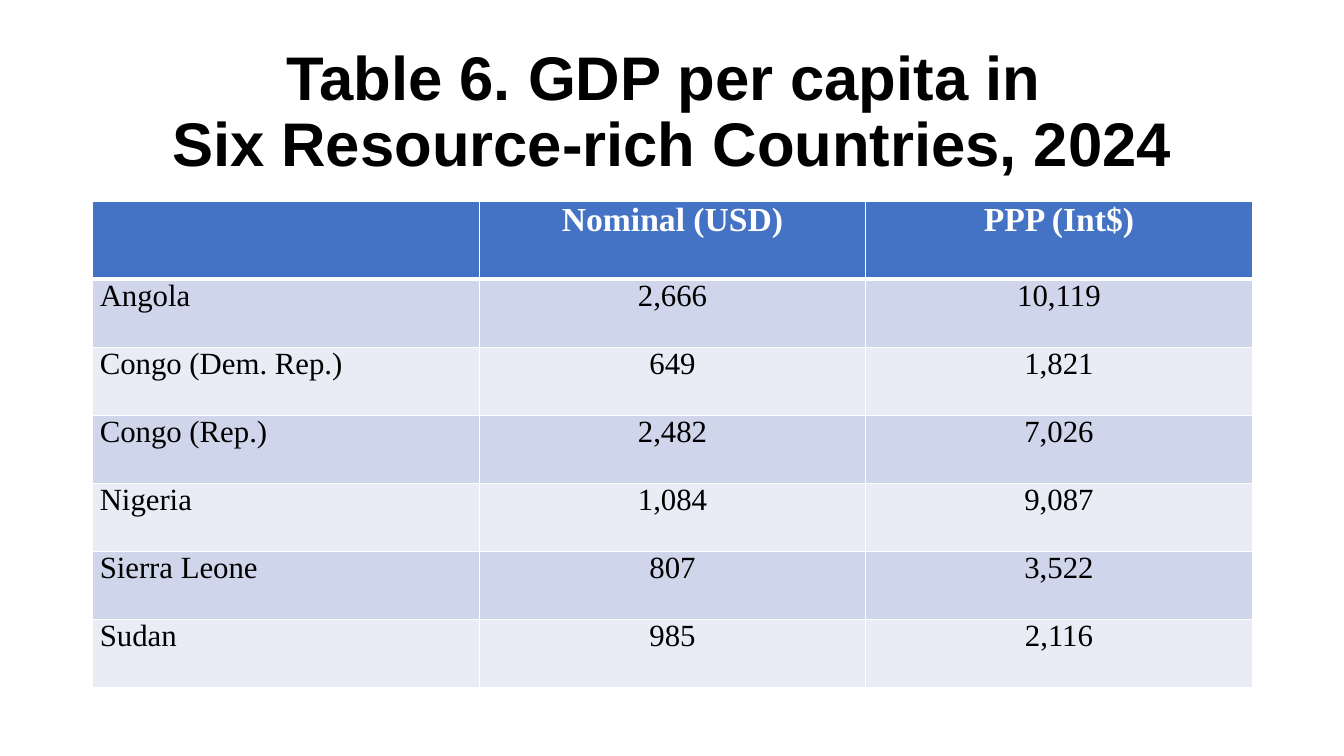
from dataclasses import dataclass

from lxml.etree import SubElement
from pptx import Presentation
from pptx.dml.color import RGBColor
from pptx.enum.text import MSO_ANCHOR, PP_ALIGN as Align
from pptx.oxml.ns import qn
from pptx.slide import Slide
from pptx.table import Table, _Cell as Cell
from pptx.text.text import _Paragraph as Paragraph
from pptx.util import Inches, Pt

BLACK = RGBColor(0x00, 0x00, 0x00)
WHITE = RGBColor(0xFF, 0xFF, 0xFF)
HEADER_BLUE = RGBColor(0x44, 0x72, 0xC4)
DARK_BAND = RGBColor(0xCF, 0xD5, 0xEA)
LIGHT_BAND = RGBColor(0xE9, 0xEB, 0xF5)

LEFT, WIDTH = 0.92, 11.5
TABLE_HEIGHT, HEADER_HEIGHT = 4.82, 0.77


@dataclass(frozen=True)
class TextStyle:
    font: str
    size: int
    color: RGBColor
    bold: bool


@dataclass(frozen=True)
class Country:
    name: str
    nominal: int
    ppp: int


TITLE_STYLE = TextStyle("Arial", 44, BLACK, True)
HEADER_STYLE = TextStyle("Times New Roman", 24, WHITE, True)
BODY_STYLE = TextStyle("Times New Roman", 22, BLACK, False)

TITLE_LINES = ["Table 6. GDP per capita in ", "Six Resource-rich Countries, 2024"]
HEADERS = ["", "Nominal (USD)", "PPP (Int$)"]
COUNTRIES = [
    Country("Angola", 2666, 10119),
    Country("Congo (Dem. Rep.)", 649, 1821),
    Country("Congo (Rep.)", 2482, 7026),
    Country("Nigeria", 1084, 9087),
    Country("Sierra Leone", 807, 3522),
    Country("Sudan", 985, 2116),
]


def add_span(para: Paragraph, text: str, style: TextStyle) -> None:
    span = para.add_run()
    span.text = text
    span.font.name = style.font
    span.font.size = Pt(style.size)
    span.font.bold = style.bold
    span.font.color.rgb = style.color


def add_title(page: Slide) -> None:
    box = page.shapes.add_textbox(Inches(LEFT), Inches(0.4), Inches(WIDTH), Inches(1.45))
    frame = box.text_frame
    frame.word_wrap = True
    frame.vertical_anchor = MSO_ANCHOR.MIDDLE
    para = frame.paragraphs[0]
    para.alignment = Align.CENTER
    para.line_spacing = 0.9
    for index, line in enumerate(TITLE_LINES):
        if index:
            para.add_line_break()
        add_span(para, line, TITLE_STYLE)


def set_borders(cell: Cell, top: int, bottom: int) -> None:
    properties = cell._tc.get_or_add_tcPr()
    for side, points in {"L": 1, "R": 1, "T": top, "B": bottom}.items():
        line = SubElement(properties, qn(f"a:ln{side}"), w=str(Pt(points)))
        fill = SubElement(line, qn("a:solidFill"))
        SubElement(fill, qn("a:srgbClr"), val=str(WHITE))


def fill_row(table: Table, row: int, texts: list[str], style: TextStyle, color: RGBColor) -> None:
    for column, text in enumerate(texts):
        cell = table.cell(row, column)
        set_borders(cell, top=3 if row == 1 else 1, bottom=3 if row == 0 else 1)
        cell.fill.solid()
        cell.fill.fore_color.rgb = color
        cell.margin_left = cell.margin_right = Inches(0.07)
        cell.margin_top = cell.margin_bottom = 0
        cell.vertical_anchor = MSO_ANCHOR.TOP
        if text:
            para = cell.text_frame.paragraphs[0]
            para.alignment = Align.CENTER if column else Align.LEFT
            add_span(para, text, style)


def add_gdp_table(page: Slide) -> None:
    table = page.shapes.add_table(
        len(COUNTRIES) + 1, len(HEADERS),
        Inches(LEFT), Inches(2), Inches(WIDTH), Inches(TABLE_HEIGHT),
    ).table
    body_height = (TABLE_HEIGHT - HEADER_HEIGHT) / len(COUNTRIES)
    for index, row in enumerate(table.rows):
        row.height = Inches(body_height if index else HEADER_HEIGHT)
    fill_row(table, 0, HEADERS, HEADER_STYLE, HEADER_BLUE)
    for index, country in enumerate(COUNTRIES, start=1):
        texts = [country.name, f"{country.nominal:,}", f"{country.ppp:,}"]
        fill_row(table, index, texts, BODY_STYLE, DARK_BAND if index % 2 else LIGHT_BAND)


def main() -> None:
    deck = Presentation()
    deck.slide_width, deck.slide_height = Inches(13.33), Inches(7.5)
    page = deck.slides.add_slide(deck.slide_layouts[6])
    add_title(page)
    add_gdp_table(page)
    deck.save("out.pptx")


if __name__ == "__main__":
    main()
